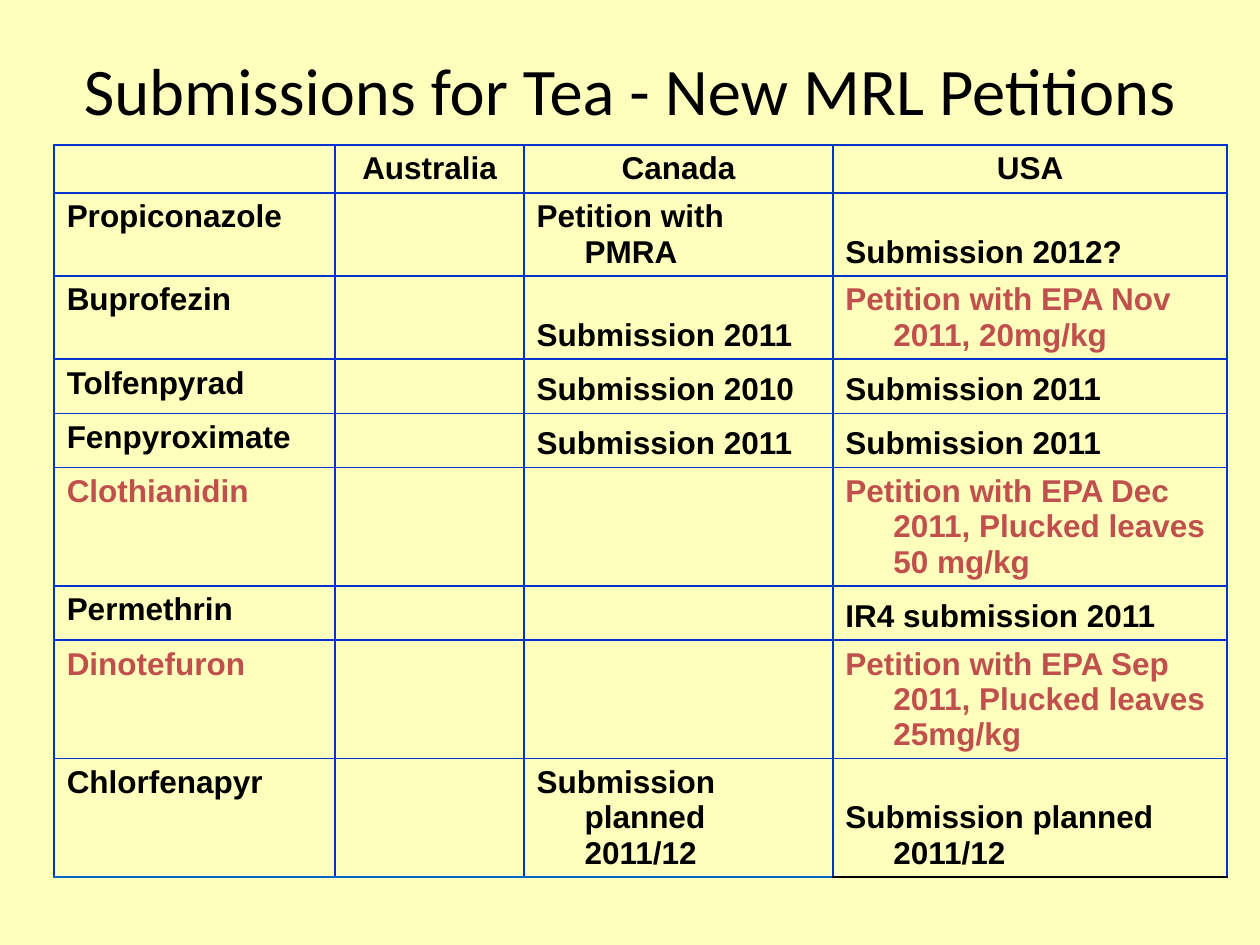
from lxml import etree
from pptx import Presentation
from pptx.dml.color import RGBColor
from pptx.enum import text
from pptx.oxml import ns
from pptx.util import Inches, Pt

# Content
TITLE = "Submissions for Tea - New MRL Petitions"
COUNTRIES = ["", "Australia", "Canada", "USA"]
PETITIONS = [
    ("Propiconazole", "", "Petition with PMRA", "Submission 2012?"),
    ("Buprofezin", "", "Submission 2011", "Petition with EPA Nov 2011, 20mg/kg"),
    ("Tolfenpyrad", "", "Submission 2010", "Submission 2011"),
    ("Fenpyroximate", "", "Submission 2011", "Submission 2011"),
    ("Clothianidin", "", "", "Petition with EPA Dec 2011, Plucked leaves 50 mg/kg"),
    ("Permethrin", "", "", "IR4 submission 2011"),
    ("Dinotefuron", "", "", "Petition with EPA Sep 2011, Plucked leaves 25mg/kg"),
    ("Chlorfenapyr", "", "Submission planned 2011/12", "Submission planned 2011/12"),
]
HIGHLIGHTED = ("Clothianidin", "Dinotefuron", "Petition with EPA")

# Layout and colours
COLUMN_WIDTHS = [2.23, 1.5, 2.45, 3.13]
ROW_HEIGHTS = [0.38, 0.66, 0.66, 0.43, 0.43, 0.94, 0.43, 0.94, 0.94]
BACKGROUND, INK, ACCENT = "FFFFBD", "000000", "C0504D"
GRID, GRID_BOTTOM = "0033CC", "0066CC"
HANGING_INDENT = Inches(0.38)


def rgb(hex_colour):
    return RGBColor.from_string(hex_colour)


def format_font(font, colour, **values):
    for name, value in values.items():
        setattr(font, name, value)
    font.color.rgb = rgb(colour)


def add_borders(cell, bottom):
    properties = cell._tc.get_or_add_tcPr()
    for side, colour in zip("LRTB", (GRID, GRID, GRID, bottom)):
        line = etree.SubElement(properties, ns.qn(f"a:ln{side}"), w=str(Pt(1)))
        fill = etree.SubElement(line, ns.qn("a:solidFill"))
        etree.SubElement(fill, ns.qn("a:srgbClr"), val=colour)


def fill_cell(cell, words, is_header, at_bottom):
    if not words:
        cell.margin_top = cell.margin_bottom = 0
        return
    cell.vertical_anchor = (text.MSO_ANCHOR.BOTTOM if at_bottom
                            else text.MSO_ANCHOR.TOP)
    paragraph = cell.text_frame.paragraphs[0]
    paragraph.alignment = text.PP_ALIGN.CENTER if is_header else text.PP_ALIGN.LEFT
    indents = paragraph._p.get_or_add_pPr()
    indents.set("marL", str(HANGING_INDENT))
    indents.set("indent", str(-HANGING_INDENT))
    run = paragraph.add_run()
    run.text = words
    colour = ACCENT if words.startswith(HIGHLIGHTED) else INK
    format_font(run.font, colour, name="Arial", size=Pt(18), bold=True)


def main():
    deck = Presentation()
    deck.slide_width, deck.slide_height = Inches(10), Inches(7.5)
    slide = deck.slides.add_slide(deck.slide_layouts[5])
    slide.background.fill.solid()
    slide.background.fill.fore_color.rgb = rgb(BACKGROUND)

    # Title
    title = slide.shapes.title
    title.left, title.top, title.width, title.height = map(Inches, (0.5, 0.08, 9, 1.25))
    title.text_frame.text = TITLE
    title.text_frame.vertical_anchor = text.MSO_ANCHOR.MIDDLE
    heading = title.text_frame.paragraphs[0]
    heading.alignment = text.PP_ALIGN.CENTER
    format_font(heading.runs[0].font, INK, name="Calibri", size=Pt(38))

    # Petition table
    rows = [COUNTRIES, *PETITIONS]
    table = slide.shapes.add_table(
        len(rows), len(COUNTRIES), Inches(0.43), Inches(1.15),
        Inches(sum(COLUMN_WIDTHS)), Inches(sum(ROW_HEIGHTS))).table
    table.horz_banding = table.first_row = False
    for column, width in zip(table.columns, COLUMN_WIDTHS):
        column.width = Inches(width)
    for row, height in zip(table.rows, ROW_HEIGHTS):
        row.height = Inches(height)

    last_row, last_column = len(rows) - 1, len(COUNTRIES) - 1
    for r, entries in enumerate(rows):
        for c, words in enumerate(entries):
            cell = table.cell(r, c)
            bottom = GRID
            if r == last_row:
                bottom = INK if c == last_column else GRID_BOTTOM
            add_borders(cell, bottom)
            cell.fill.background()
            fill_cell(cell, words, is_header=r == 0, at_bottom=c >= 2)

    deck.save("out.pptx")


if __name__ == "__main__":
    main()
